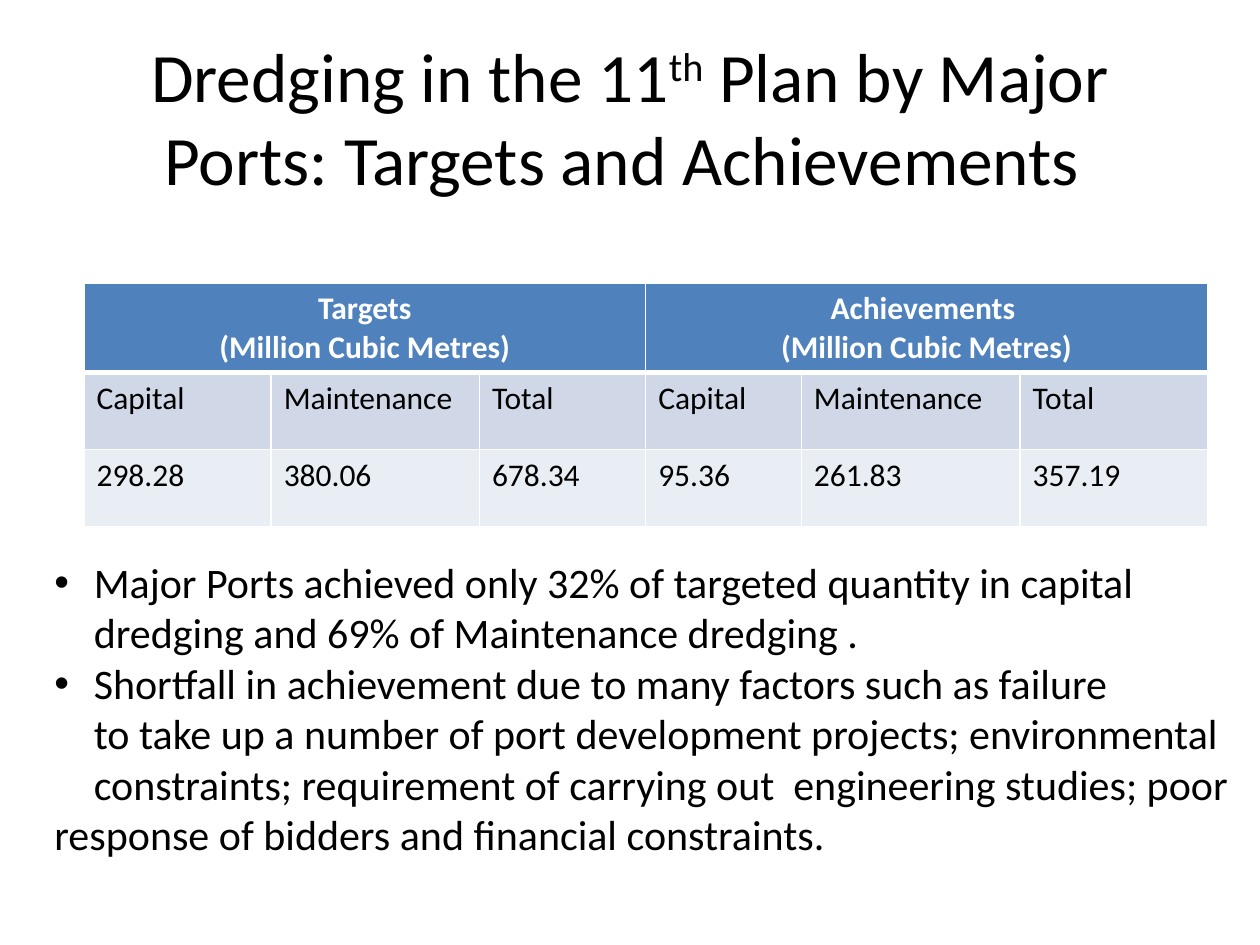
from typing import NamedTuple

from lxml.etree import SubElement
from pptx import Presentation
from pptx.dml.color import RGBColor
from pptx.enum.text import MSO_ANCHOR, PP_ALIGN
from pptx.oxml.ns import qn
from pptx.util import Pt

BLACK = RGBColor(0x00, 0x00, 0x00)
WHITE = RGBColor(0xFF, 0xFF, 0xFF)
BLUE = RGBColor(0x4F, 0x81, 0xBD)
MID = RGBColor(0xD0, 0xD8, 0xE8)
PALE = RGBColor(0xE9, 0xED, 0xF4)
FONT = "Calibri"
STEP = 22.5

UNIT = "(Million Cubic Metres)"
HEADS = [f"Targets\n{UNIT}", f"Achievements \n{UNIT}"]
ROWS = [
    (["Capital", "Maintenance", "Total"] * 2, MID),
    (["298.28", "380.06", "678.34", "95.36", "261.83", "357.19"], PALE),
]
COLS = [107, 119, 95, 89, 125, 107]
HIGH = [51, 44, 44]


class Line(NamedTuple):
    text: str
    left: float = STEP
    dot: bool = False


LINES = [
    Line("Major Ports achieved only 32% of targeted quantity in capital", dot=True),
    Line("dredging and 69% of Maintenance dredging ."),
    Line("Shortfall in achievement due to many factors such as failure", dot=True),
    Line("to take up a number of port development projects; environmental"),
    Line("constraints; requirement of carrying out  engineering studies; poor"),
    Line("response of bidders and financial constraints.", left=0),
]


def style(para, size: float, color: RGBColor = BLACK, bold: bool = False) -> None:
    for run in para.runs:
        run.font.name = FONT
        run.font.size = Pt(size)
        run.font.bold = bold
        run.font.color.rgb = color


def add_box(slide, left: float, top: float, width: float, height: float):
    box = slide.shapes.add_textbox(Pt(left), Pt(top), Pt(width), Pt(height))
    box.text_frame.word_wrap = True
    return box.text_frame


def add_title(slide) -> None:
    frame = add_box(slide, 36, 21.6, 648, 90)
    frame.vertical_anchor = MSO_ANCHOR.MIDDLE
    para = frame.paragraphs[0]
    para.alignment = PP_ALIGN.CENTER
    for text in ("Dredging in the 11", "th",
                 " Plan by Major Ports: Targets and Achievements "):
        para.add_run().text = text
    style(para, 39.6)
    para.runs[1].font._element.set("baseline", "30000")


def edge(cell, base: float) -> None:
    """Draw white cell borders, with the bottom one base points wide."""
    props = cell._tc.get_or_add_tcPr()
    sides = {"lnL": 1, "lnR": 1, "lnT": 1, "lnB": base}
    for spot, (side, width) in enumerate(sides.items()):
        line = SubElement(props, qn(f"a:{side}"), w=str(Pt(width)))
        fill = SubElement(line, qn("a:solidFill"))
        SubElement(fill, qn("a:srgbClr"), val=str(WHITE))
        props.insert(spot, line)


def fill_cell(cell, text: str, back: RGBColor, head: bool = False) -> None:
    cell.text_frame.text = text
    cell.fill.solid()
    cell.fill.fore_color.rgb = back
    for para in cell.text_frame.paragraphs:
        para.alignment = PP_ALIGN.CENTER if head else PP_ALIGN.LEFT
        style(para, 18, WHITE if head else BLACK, head)


def add_grid(slide) -> None:
    grid = slide.shapes.add_table(len(HIGH), len(COLS), Pt(48), Pt(162),
                                  Pt(sum(COLS)), Pt(sum(HIGH))).table
    for col, width in zip(grid.columns, COLS):
        col.width = Pt(width)
    for row, height in zip(grid.rows, HIGH):
        row.height = Pt(height)
    for part, text in enumerate(HEADS):
        first = part * 3
        grid.cell(0, first).merge(grid.cell(0, first + 2))
        fill_cell(grid.cell(0, first), text, BLUE, head=True)
    for row, (texts, back) in enumerate(ROWS, 1):
        for col, text in enumerate(texts):
            fill_cell(grid.cell(row, col), text, back)
    for row in range(len(HIGH)):
        for col in range(len(COLS)):
            edge(grid.cell(row, col), 1 if row else 3)


def add_notes(slide) -> None:
    frame = add_box(slide, 24, 314.5, 696, 211)
    frame.text = "\n".join(line.text for line in LINES)
    for para, line in zip(frame.paragraphs, LINES):
        style(para, 24)
        props = para._p.get_or_add_pPr()
        props.set("marL", str(Pt(line.left)))
        props.set("indent", str(Pt(-STEP if line.dot else 0)))
        if line.dot:
            SubElement(props, qn("a:buFont"), typeface="Arial")
            SubElement(props, qn("a:buChar"), char="•")


def main() -> None:
    deck = Presentation()
    deck.slide_width, deck.slide_height = Pt(720), Pt(540)
    slide = deck.slides.add_slide(deck.slide_layouts[6])
    add_title(slide)
    add_grid(slide)
    add_notes(slide)
    deck.save("out.pptx")


if __name__ == "__main__":
    main()
